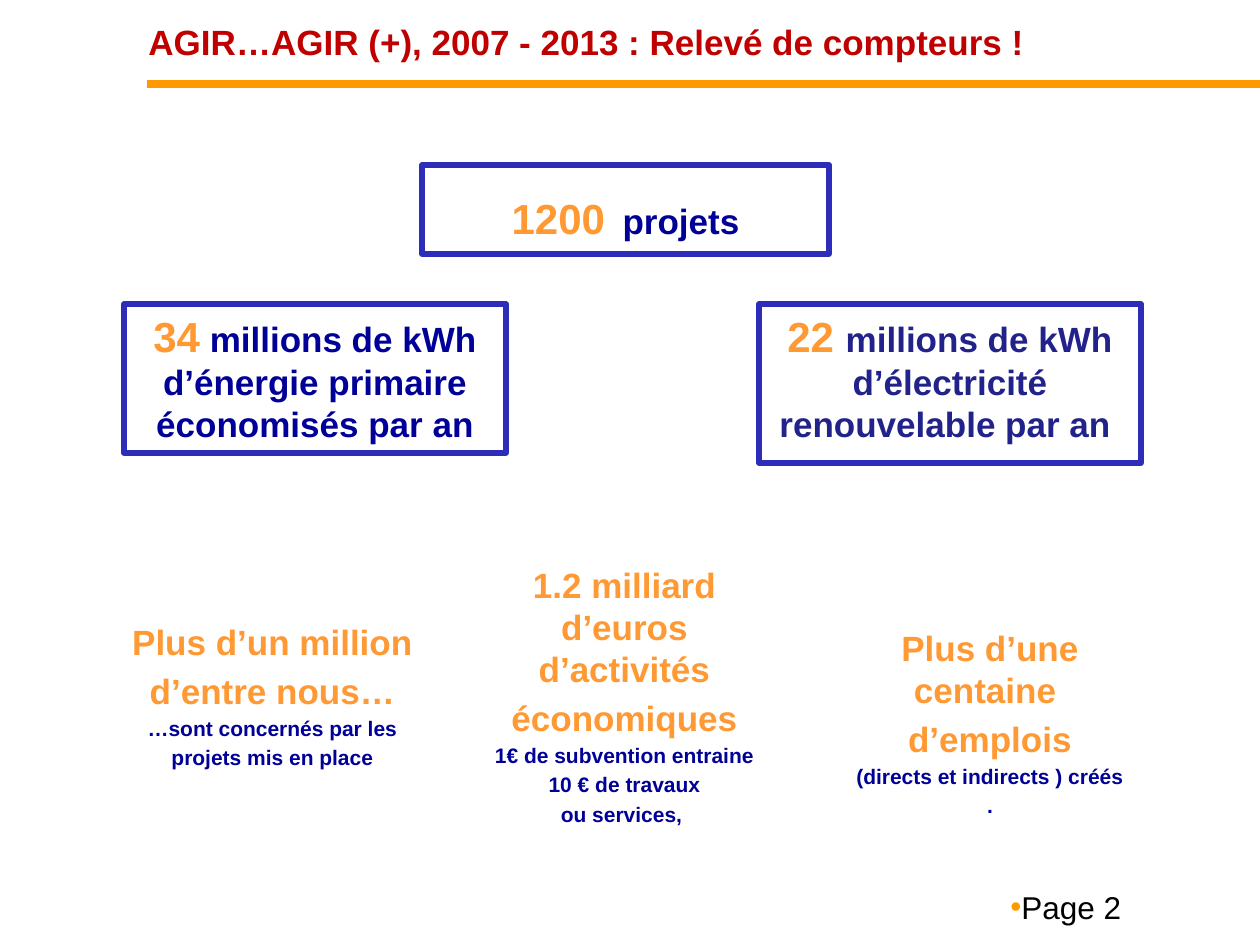
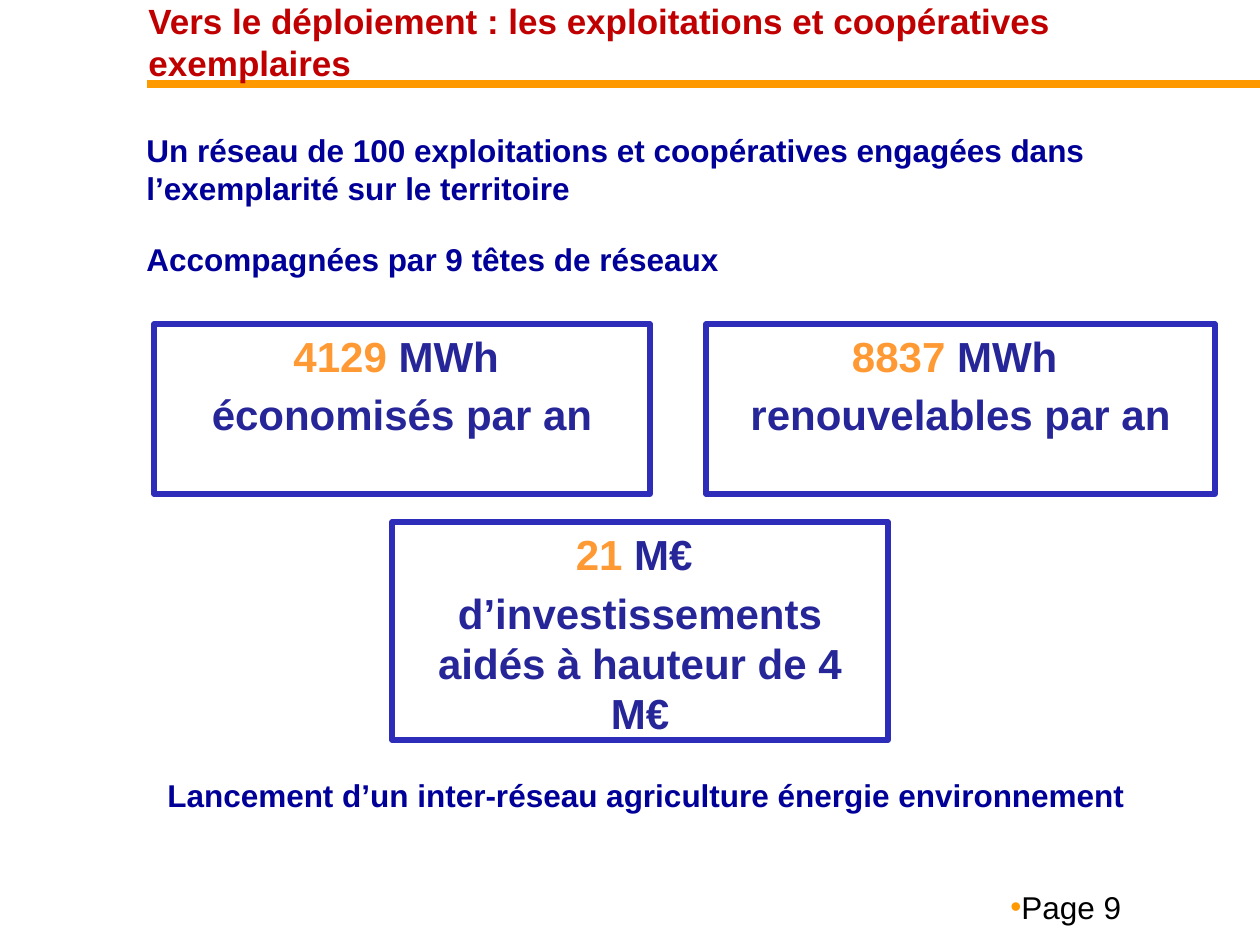
import lxml.etree
import pptx
import pptx.dml.color
import pptx.enum.shapes
import pptx.enum.text
import pptx.oxml.ns
import pptx.util

EMU_PER_PX = 914400 / 126
FONT = "Arial"
RED = pptx.dml.color.RGBColor(0xC0, 0x00, 0x00)
AMBER = pptx.dml.color.RGBColor(0xFF, 0x99, 0x00)
ORANGE = pptx.dml.color.RGBColor(0xFF, 0x99, 0x33)
NAVY = pptx.dml.color.RGBColor(0x00, 0x00, 0x99)
INDIGO = pptx.dml.color.RGBColor(0x26, 0x26, 0x99)
DEEP_INDIGO = pptx.dml.color.RGBColor(0x22, 0x22, 0x8B)
FRAME_BLUE = pptx.dml.color.RGBColor(0x2D, 0x2D, 0xB9)
BLACK = pptx.dml.color.RGBColor(0x00, 0x00, 0x00)
LEFT = pptx.enum.text.PP_ALIGN.LEFT
CENTER = pptx.enum.text.PP_ALIGN.CENTER
TOP = pptx.enum.text.MSO_ANCHOR.TOP
MIDDLE = pptx.enum.text.MSO_ANCHOR.MIDDLE


def px(length):
    return pptx.util.Emu(round(length * EMU_PER_PX))


def add_element(parent, tag, **attributes):
    return lxml.etree.SubElement(parent, pptx.oxml.ns.qn(tag), attributes)


def write(paragraph, text, *, size=20, color=NAVY, bold=True):
    run = paragraph.add_run()
    run.text = text
    run.font.name = FONT
    run.font.size = pptx.util.Pt(size)
    run.font.color.rgb = color
    run.font.bold = bold


class Deck:
    def __init__(self):
        self.presentation = pptx.Presentation()
        self.presentation.slide_width = px(1260)
        self.presentation.slide_height = px(945)
        self.slide = None

    def new_slide(self, title, page):
        self.slide = self.presentation.slides.add_slide(self.presentation.slide_layouts[6])
        self.rule(147, 84, 1260)
        self.text((136, 10, 1092, 63), [[(title, 20, RED)]], anchor=MIDDLE)
        self.page_number(page)

    def rule(self, left, top, right):
        connector = self.slide.shapes.add_connector(
            pptx.enum.shapes.MSO_CONNECTOR.STRAIGHT, px(left), px(top), px(right), px(top))
        connector.line.color.rgb = AMBER
        connector.line.width = pptx.util.Pt(4.25)
        add_element(connector._element.spPr, "a:effectLst")

    def page_number(self, page):
        shape = self.slide.shapes.add_textbox(px(998), px(882), px(262), px(63))
        paragraph = shape.text_frame.paragraphs[0]
        properties = paragraph._p.get_or_add_pPr()
        bullet_color = add_element(properties, "a:buClr")
        add_element(bullet_color, "a:srgbClr", val=str(AMBER))
        add_element(properties, "a:buFont", typeface=FONT)
        add_element(properties, "a:buChar", char="•")
        write(paragraph, f"Page {page}", size=18, color=BLACK, bold=False)

    def text(self, box, paragraphs, align=LEFT, anchor=TOP):
        shape = self.slide.shapes.add_textbox(*map(px, box))
        self.fill_text(shape.text_frame, paragraphs, align, anchor)

    def frame(self, box, paragraphs):
        shape = self.slide.shapes.add_shape(
            pptx.enum.shapes.MSO_SHAPE.RECTANGLE, *map(px, box))
        shape.shadow.inherit = False
        shape.fill.background()
        shape.line.color.rgb = FRAME_BLUE
        shape.line.width = pptx.util.Pt(3)
        add_element(shape.line._get_or_add_ln(), "a:round")
        self.fill_text(shape.text_frame, paragraphs, CENTER, TOP)

    def fill_text(self, text_frame, paragraphs, align, anchor):
        text_frame.word_wrap = True
        text_frame.vertical_anchor = anchor
        for index, runs in enumerate(paragraphs):
            paragraph = text_frame.add_paragraph() if index else text_frame.paragraphs[0]
            paragraph.alignment = align
            if index:
                paragraph.space_before = pptx.util.Pt(0.2 * runs[0][1])
            for text, size, color in runs:
                write(paragraph, text, size=size, color=color)

    def impact(self, box, headlines, details):
        paragraphs = [[(line, 20, ORANGE)] for line in headlines]
        paragraphs += [[(line, 12, NAVY)] for line in details]
        self.text(box, paragraphs, align=CENTER)

    def energy_figure(self, box, value, unit, caption):
        self.frame(box, [[(value, 24, ORANGE), (unit, 24, INDIGO)],
                         [(caption, 24, INDIGO)]])

    def statement(self, box, text):
        self.text(box, [[(text, 18, NAVY)]])


def build_results(deck):
    deck.new_slide("AGIR…AGIR (+), 2007 - 2013 : Relevé de compteurs !", 2)
    deck.frame((422, 165, 407, 89),
               [[("1200", 24, ORANGE), (" ", 36, INDIGO), ("projets", 20, NAVY)]])
    deck.frame((124, 304, 382, 149),
               [[("34", 24, ORANGE),
                 (" millions de kWh d’énergie primaire économisés par an", 20, NAVY)]])
    deck.frame((759, 304, 382, 159),
               [[("22 ", 24, ORANGE),
                 ("millions de kWh d’électricité renouvelable par an ", 20, DEEP_INDIGO)]])
    deck.impact((115, 614, 315, 168),
                ["Plus d’un million", "d’entre nous…"],
                ["…sont concernés par les", "projets mis en place"])
    deck.impact((467, 557, 315, 282),
                ["1.2 milliard d’euros d’activités", "économiques"],
                ["1€ de subvention entraine", "10 € de travaux", "ou services, "])
    deck.impact((814, 620, 352, 209),
                ["Plus d’une centaine ", "d’emplois"],
                ["(directs et indirects ) créés", "."])


def build_deployment(deck):
    deck.new_slide("Vers le déploiement : les exploitations et coopératives exemplaires", 9)
    deck.statement((134, 125, 1002, 89),
                   "Un réseau de 100 exploitations et coopératives engagées dans "
                   "l’exemplarité sur le territoire")
    deck.statement((134, 234, 725, 50), "Accompagnées par 9 têtes de réseaux")
    deck.energy_figure((154, 324, 496, 170), "4129 ", "MWh ", "économisés par an")
    deck.energy_figure((706, 324, 509, 170), "8837 ", "MWh ", "renouvelables par an")
    deck.energy_figure((392, 522, 496, 218), "21 ", "M€ ",
                       "d’investissements aidés à hauteur de 4 M€")
    deck.statement((155, 770, 1002, 89),
                   "Lancement d’un inter-réseau agriculture énergie environnement")


def main():
    deck = Deck()
    build_results(deck)
    build_deployment(deck)
    deck.presentation.save("out.pptx")


if __name__ == "__main__":
    main()
